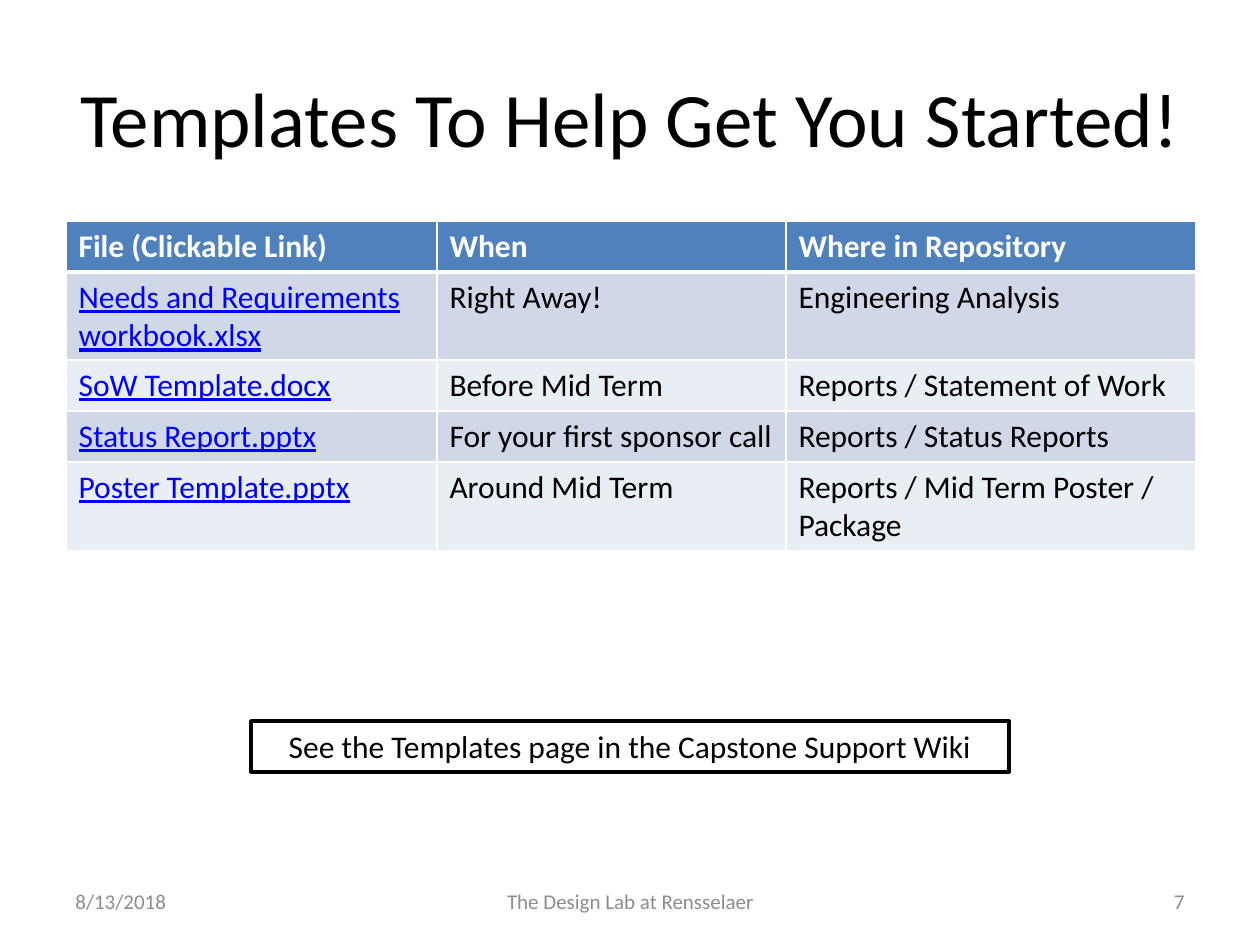
from dataclasses import dataclass

from lxml import etree
from pptx import Presentation
from pptx import util as u
from pptx.dml.color import RGBColor
from pptx.enum import shapes, text
from pptx.oxml import ns

PX = 914400 / 126


@dataclass(frozen=True)
class Theme:
    font: str = "Calibri"
    title: int = 44
    body: int = 18
    footer: int = 12
    black: str = "000000"
    white: str = "FFFFFF"
    grey: str = "8C8C8C"
    link: str = "0000FF"
    header: str = "4F81BD"
    bands: tuple = ("D0D8E8", "E9EDF4")


theme = Theme()
align = text.PP_ALIGN
anchor = text.MSO_ANCHOR


def px(*lengths):
    """Turn pixel lengths into EMU."""
    return [u.Emu(round(length * PX)) for length in lengths]


def write(frame, words, size=theme.body, color=theme.black, bold=False,
          underline=False, alignment=align.LEFT):
    frame.word_wrap = True
    para = frame.paragraphs[0]
    para.alignment = alignment
    span = para.add_run()
    span.text = words
    span.font.name = theme.font
    span.font.size = u.Pt(size)
    span.font.bold = bold
    span.font.underline = underline
    span.font.color.rgb = RGBColor.from_string(color)


deck = Presentation()
deck.slide_width, deck.slide_height = px(1260, 945)
page = deck.slides.add_slide(deck.slide_layouts[6])

# Title and footer
labels = [
    ((63, 38, 1134, 158), "Templates To Help Get You Started!",
     theme.title, theme.black, align.CENTER),
    ((63, 876, 294, 50), "8/13/2018", theme.footer, theme.grey, align.LEFT),
    ((431, 876, 399, 50), "The Design Lab at Rensselaer",
     theme.footer, theme.grey, align.CENTER),
    ((903, 876, 294, 50), "7", theme.footer, theme.grey, align.RIGHT),
]
for place, words, size, color, alignment in labels:
    box = page.shapes.add_textbox(*px(*place))
    box.text_frame.vertical_anchor = anchor.MIDDLE
    write(box.text_frame, words, size=size, color=color, alignment=alignment)

# Template table
rows = [
    ("File (Clickable Link)", "When", "Where in Repository"),
    ("Needs and Requirements workbook.xlsx", "Right Away!", "Engineering Analysis"),
    ("SoW Template.docx", "Before Mid Term", "Reports / Statement of Work"),
    ("Status Report.pptx", "For your first sponsor call", "Reports / Status Reports"),
    ("Poster Template.pptx", "Around Mid Term", "Reports / Mid Term Poster / Package"),
]
widths = (371, 349, 410)
row_height = 51
table = page.shapes.add_table(
    len(rows), len(widths),
    *px(66, 221, sum(widths), row_height * len(rows))).table
for column, width in zip(table.columns, px(*widths)):
    column.width = width

for r, row in enumerate(rows):
    table.rows[r].height = px(row_height)[0]
    is_header = r == 0
    fill = theme.header if is_header else theme.bands[(r - 1) % 2]
    for c, words in enumerate(row):
        cell = table.cell(r, c)
        is_link = c == 0 and not is_header
        color = theme.white if is_header else theme.link if is_link else theme.black
        write(cell.text_frame, words, color=color, bold=is_header, underline=is_link)
        cell.fill.solid()
        cell.fill.fore_color.rgb = RGBColor.from_string(fill)

        # Borders come before the fill in the cell properties
        properties = cell._tc.get_or_add_tcPr()
        for position, side in enumerate("LRTB"):
            thick = (is_header and side == "B") or (r == 1 and side == "T")
            border = etree.Element(ns.qn(f"a:ln{side}"), w=str(u.Pt(3 if thick else 1)))
            paint = etree.SubElement(border, ns.qn("a:solidFill"))
            etree.SubElement(paint, ns.qn("a:srgbClr"), val=theme.white)
            properties.insert(position, border)

# Wiki note
note = page.shapes.add_shape(shapes.MSO_SHAPE.RECTANGLE, *px(251, 721, 758, 51))
note.shadow.inherit = False
note.fill.solid()
note.fill.fore_color.rgb = RGBColor.from_string(theme.white)
note.line.color.rgb = RGBColor.from_string(theme.black)
note.line.width = u.Pt(2)
note.text_frame.vertical_anchor = anchor.TOP
note.text_frame.auto_size = text.MSO_AUTO_SIZE.SHAPE_TO_FIT_TEXT
write(note.text_frame, "See the Templates page in the Capstone Support Wiki",
      alignment=align.CENTER)

deck.save("out.pptx")
